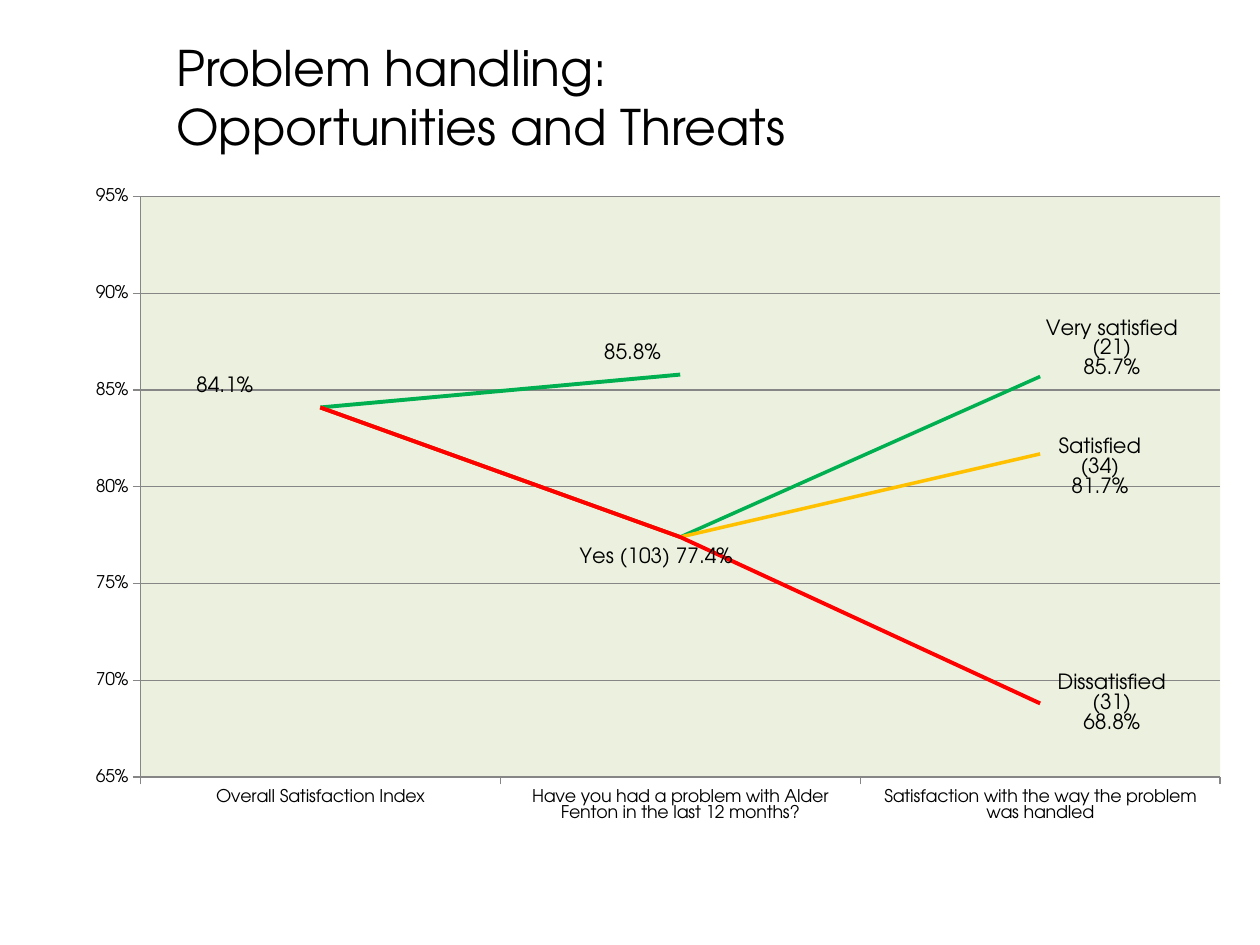
from lxml import etree
from pptx import Presentation
from pptx.chart.data import CategoryChartData
from pptx.dml.color import RGBColor
from pptx.enum.chart import XL_CHART_TYPE as CT, XL_LABEL_POSITION as LP, XL_TICK_MARK as TM
from pptx.enum.text import MSO_ANCHOR
from pptx.oxml import parse_xml
from pptx.oxml.ns import nsdecls, qn
from pptx.util import Inches, Pt

COLORS = {"text": "000000", "axis": "868686", "plot": "EBF1DE",
          "green": "00B050", "red": "FF0000", "amber": "FFC000"}
CATEGORIES = ["Overall Satisfaction Index",
              "Have you had a problem with Alder Fenton in the last 12 months?",
              "Satisfaction with the way the problem was handled"]
# Each series: values, colour, line width, labels as (point, text, x shift, y shift)
SERIES = [
    ((0.841, 0.858, None), "green", 2.25,
     [(0, "84.1%", -0.08, -0.03), (1, "85.8%", -0.04, -0.03)]),
    ((0.841, 0.774, None), "red", 2, [(1, "Yes (103) 77.4%", -0.02, 0.03)]),
    ((0.841, 0.774, 0.857), "green", 2, [(2, "Very satisfied\n(21)\n85.7%", 0.06, -0.04)]),
    ((0.841, 0.774, 0.817), "amber", 2, [(2, "Satisfied\n(34)\n81.7%", 0.05, 0.02)]),
    ((0.841, 0.774, 0.688), "red", 2.25, [(2, "Dissatisfied\n(31)\n68.8%", 0.06, 0)]),
]


class SlideBuilder:
    """Holds the style and the current slide."""

    def __init__(self, prs, font="TeX Gyre Adventor"):
        self.s = prs.slides.add_slide(prs.slide_layouts[6])
        self.font = font

    def color(self, name):
        return RGBColor.from_string(COLORS[name])

    def style(self, font, size):
        font.name, font.size, font.bold = self.font, Pt(size), False
        font.color.rgb = self.color("text")

    def line(self, fmt, color, width):
        fmt.line.color.rgb = self.color(color)
        fmt.line.width = Pt(width)

    def title(self, text, x, y, w, h):
        tf = self.s.shapes.add_textbox(Inches(x), Inches(y), Inches(w), Inches(h)).text_frame
        tf.word_wrap = True
        tf.vertical_anchor = MSO_ANCHOR.BOTTOM
        tf.margin_bottom = 0
        p = tf.paragraphs[0]
        p.text = text
        self.style(p.font, 28)

    def layout(self, **values):
        items = "".join(f'<c:{k} val="{v}"/>' for k, v in values.items())
        return parse_xml(f'<c:layout {nsdecls("c")}><c:manualLayout>{items}'
                         '</c:manualLayout></c:layout>')

    def label(self, series, point, text, dx, dy):
        label = series.points[point].data_label
        tf = label.text_frame
        tf.text = text
        for p in tf.paragraphs:
            for r in p.runs:
                self.style(r.font, 12)
        label.position = LP.CENTER
        tx = tf._txBody.getparent()
        if tx.tag != qn("c:tx"):
            tx = tx.getparent()
        tx.addprevious(self.layout(x=dx, y=dy))

    def plot_area(self, chart):
        area = chart._chartSpace.chart.plotArea
        for old in area.findall(qn("c:layout")):
            area.remove(old)
        area.insert(0, self.layout(layoutTarget="inner", xMode="edge", yMode="edge",
                                   x=0.088, y=0.031, w=0.904, h=0.836))
        sp = etree.SubElement(area, qn("c:spPr"))
        fill = etree.SubElement(sp, qn("a:solidFill"))
        etree.SubElement(fill, qn("a:srgbClr"), val=COLORS["plot"])

    def axes(self, chart):
        for axis in (chart.category_axis, chart.value_axis):
            axis.major_tick_mark, axis.minor_tick_mark = TM.OUTSIDE, TM.NONE
            self.line(axis.format, "axis", 0.75)
            self.style(axis.tick_labels.font, 10)
        axis.minimum_scale, axis.maximum_scale, axis.major_unit = 0.65, 0.95, 0.05
        axis.has_major_gridlines = True
        self.line(axis.major_gridlines.format, "axis", 0.75)
        axis.tick_labels.number_format = "0%"
        axis.tick_labels.number_format_is_linked = False

    def line_chart(self, categories, rows, x, y, w, h):
        data = CategoryChartData(number_format="0.0%")
        data.categories = categories
        for i, row in enumerate(rows, 1):
            data.add_series(f"Series {i}", row[0])
        chart = self.s.shapes.add_chart(CT.LINE, Inches(x), Inches(y), Inches(w), Inches(h),
                                        data).chart
        chart.has_legend = chart.has_title = False
        self.style(chart.font, 10)
        self.axes(chart)
        self.plot_area(chart)
        chart.plots[0].vary_by_categories = False
        for series, (_, color, width, labels) in zip(chart.plots[0].series, rows):
            series.smooth = False
            self.line(series.format, color, width)
            series.data_labels.show_value = False
            for item in labels:
                self.label(series, *item)
        for el in chart._chartSpace.iter(qn("c:showLeaderLines")):
            el.set("val", "0")


def main():
    prs = Presentation()
    prs.slide_width, prs.slide_height = Inches(10), Inches(7.5)
    b = SlideBuilder(prs)
    b.line_chart(CATEGORIES, SERIES, 0.28, 1.39, 9.48, 5.51)
    b.title("Problem handling:\vOpportunities and Threats", 1.3, 0.25, 8.43, 0.98)
    prs.save("out.pptx")


if __name__ == "__main__":
    main()
